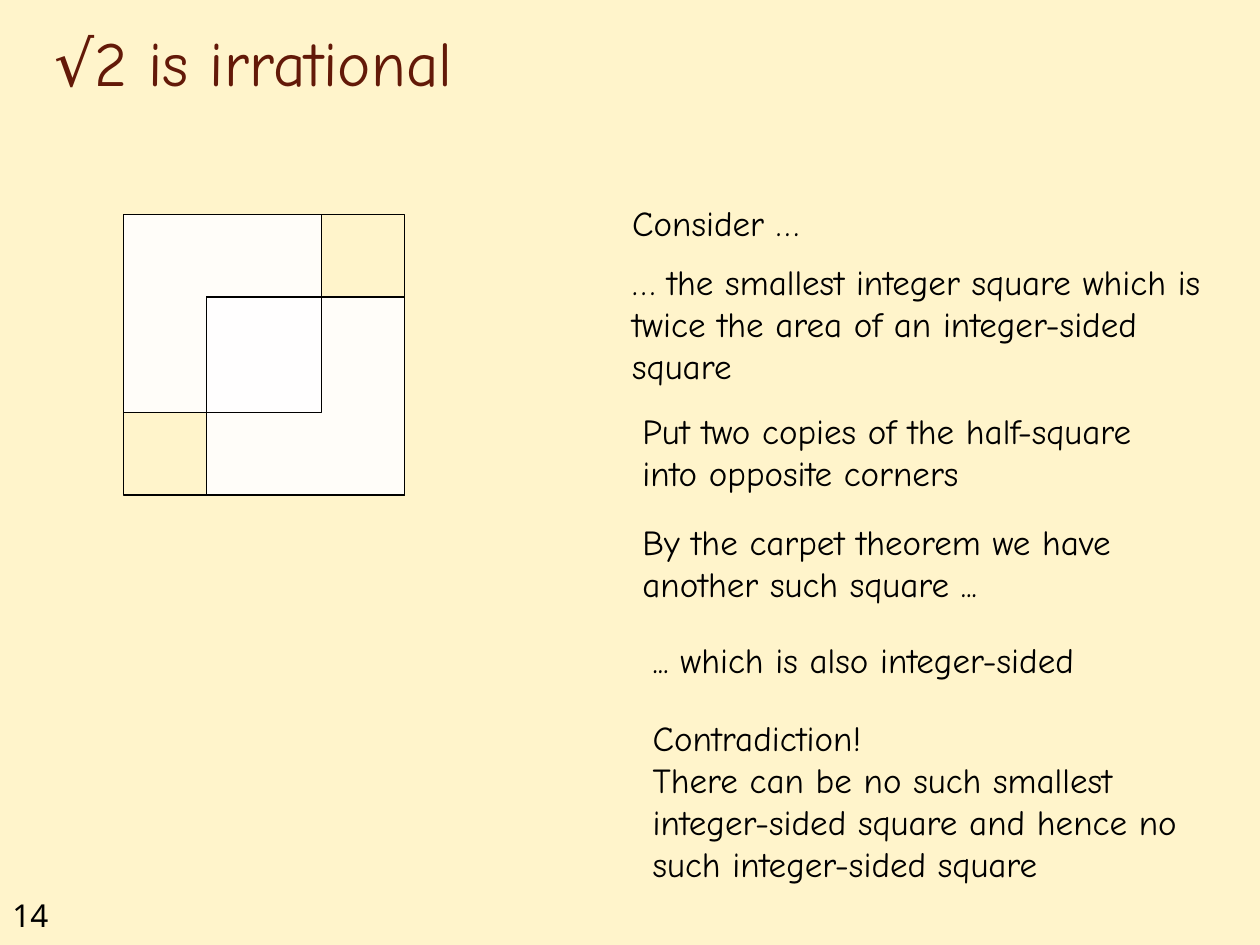
from lxml import etree
from pptx import Presentation
from pptx.dml.color import RGBColor
from pptx.enum.shapes import MSO_SHAPE
from pptx.enum.text import MSO_ANCHOR
from pptx.oxml.ns import qn
from pptx.util import Pt

RECTANGLE = MSO_SHAPE.RECTANGLE
TOP, BOTTOM = MSO_ANCHOR.TOP, MSO_ANCHOR.BOTTOM

CREAM = RGBColor(0xFF, 0xF2, 0xC0)
WHITE = RGBColor(0xFF, 0xFF, 0xFF)
BLACK = RGBColor(0x00, 0x00, 0x00)
MAROON = RGBColor(0x63, 0x19, 0x08)


def set_opacity(fill, color, percent):
    fill.solid()
    fill.fore_color.rgb = color
    # The public colour object has no alpha setting
    srgb = fill._xPr.find(qn("a:solidFill")).find(qn("a:srgbClr"))
    etree.SubElement(srgb, qn("a:alpha")).set("val", str(percent * 1000))


def add_text(box, paragraphs, size, color=BLACK, font="Comic Neue", anchor=TOP):
    frame = slide.shapes.add_textbox(*map(Pt, box)).text_frame
    frame.word_wrap = True
    frame.vertical_anchor = anchor
    frame.text = "\n".join(paragraphs)
    font_format = {"size": Pt(size), "name": font}
    for paragraph in frame.paragraphs:
        for run in paragraph.runs:
            for attribute, value in font_format.items():
                setattr(run.font, attribute, value)
            run.font.color.rgb = color


prs = Presentation()
prs.slide_width, prs.slide_height = Pt(720), Pt(540)
slide = prs.slides.add_slide(prs.slide_layouts[6])
set_opacity(slide.background.fill, CREAM, 82)

# Slide number and title
add_text((0, 508.3, 54, 28.8), ["14"], 18, font="Noto Sans")
add_text((24, 12, 612, 48), ["√2 is irrational"], 36, MAROON, anchor=BOTTOM)

# Carpet diagram: two half-area squares in opposite corners of the big square
left, top = 70.6, 122.4
big_side, half_side = 160.5, 113.2
corner_gap = big_side - half_side
overlap_side = half_side - corner_gap
carpet_squares = [
    # offset from the top-left corner, side, filled
    (0, half_side, True),
    (0, big_side, False),
    (corner_gap, half_side, True),
    (corner_gap, overlap_side, False),
]
for offset, side, filled in carpet_squares:
    square = slide.shapes.add_shape(
        RECTANGLE, Pt(left + offset), Pt(top + offset), Pt(side), Pt(side))
    square.shadow.inherit = False
    square.line.color.rgb = BLACK
    square.line.width = Pt(0.75)
    if filled:
        set_opacity(square.fill, WHITE, 90)
    else:
        square.fill.background()

# Steps of the proof
proof_steps = [
    ((354.2, 111.6, 232.6, 31.7), ["Consider …"]),
    ((354.2, 145.4, 339.8, 79.9),
     ["… the smallest integer square which is twice the area of an integer-sided square"]),
    ((360, 230.4, 300.2, 55.4),
     ["Put two copies of the half-square into opposite corners"]),
    ((360, 293.8, 289.4, 55.4),
     ["By the carpet theorem we have another such square ..."]),
    ((365.8, 361.4, 317.5, 31.7), ["... which is also integer-sided"]),
    ((365.8, 406.1, 317.5, 104.4),
     ["Contradiction!",
      "There can be no such smallest integer-sided square and hence no such integer-sided square"]),
]
for box, paragraphs in proof_steps:
    add_text(box, paragraphs, 20)

prs.save("out.pptx")
